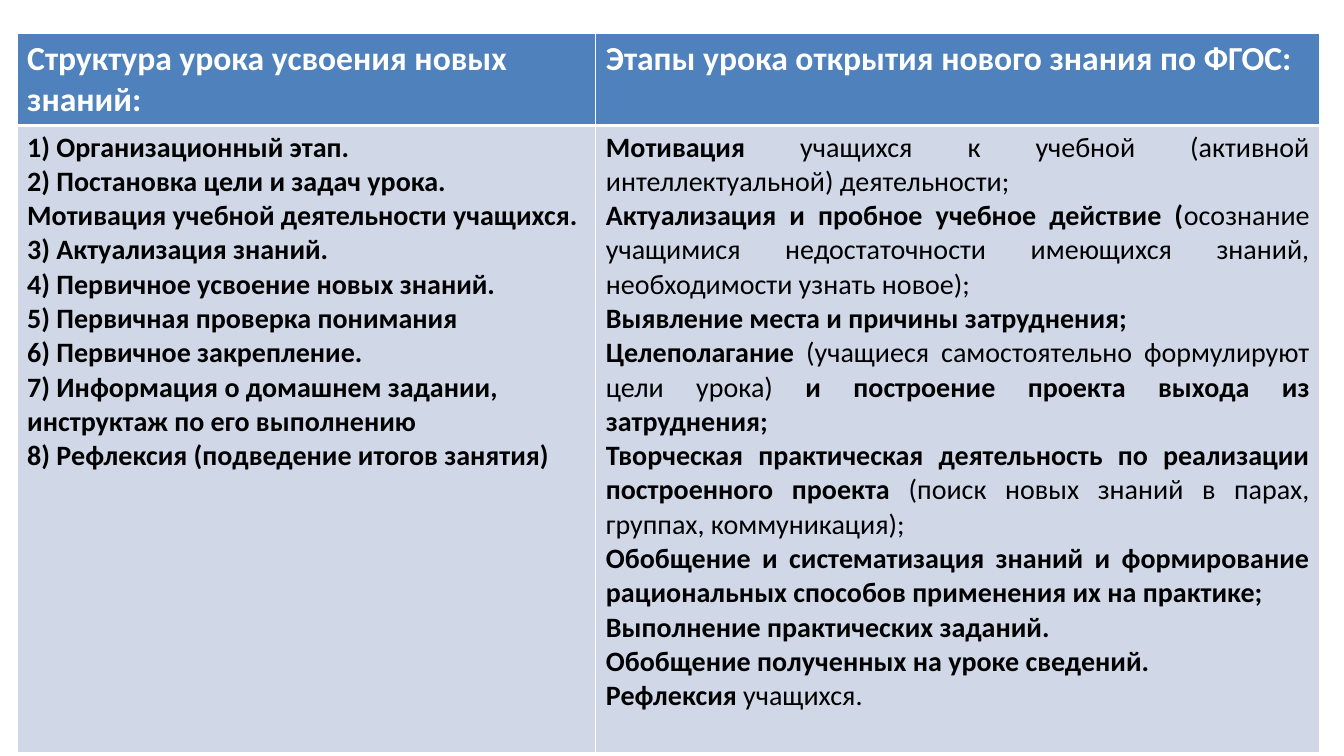
from dataclasses import dataclass

from lxml import etree
from pptx import Presentation
from pptx.dml.color import RGBColor
from pptx.enum.text import PP_ALIGN
from pptx.oxml.ns import qn
from pptx.util import Pt

LEFT = PP_ALIGN.LEFT
JUSTIFY = PP_ALIGN.JUSTIFY
PX = 9144  # EMU in one px, 100 px to the inch
BLANK = 6


@dataclass(frozen=True)
class Theme:
    font: str = "Calibri"
    head_size: int = 24
    body_size: int = 20
    white: str = "FFFFFF"
    black: str = "000000"
    blue: str = "4F81BD"
    pale: str = "D0D8E8"
    thin: int = 1
    thick: int = 3


# Each paragraph is a tuple of pieces: bold, plain, bold and so on
HEADS = [
    "Структура урока усвоения новых знаний:",
    "Этапы урока открытия нового знания по ФГОС:",
]
STEPS = [
    ("1) Организационный этап.",),
    ("2) Постановка цели и задач урока. Мотивация учебной деятельности учащихся.",),
    ("3) Актуализация знаний.",),
    ("4) Первичное усвоение новых знаний.",),
    ("5) Первичная проверка понимания",),
    ("6) Первичное закрепление.",),
    ("7) Информация о домашнем задании, инструктаж по его выполнению",),
    ("8) Рефлексия (подведение итогов занятия)",),
]
STAGES = [
    ("Мотивация",
     " учащихся к учебной (активной интеллектуальной) деятельности;"),
    ("Актуализация и пробное учебное действие (",
     "осознание учащимися недостаточности имеющихся знаний, "
     "необходимости узнать новое);"),
    ("Выявление места и причины затруднения;",),
    ("Целеполагание",
     " (учащиеся самостоятельно формулируют цели урока) ",
     "и построение проекта выхода из затруднения;"),
    ("Творческая практическая деятельность по реализации построенного проекта ",
     "(поиск новых знаний в парах, группах, коммуникация);"),
    ("Обобщение и систематизация знаний и формирование "
     "рациональных способов применения их на практике;",),
    ("Выполнение практических заданий.",),
    ("Обобщение полученных на уроке сведений.",),
    ("Рефлексия", " учащихся."),
]


class Deck:
    def __init__(self, theme, width, height):
        self.theme = theme
        self.prs = Presentation()
        self.prs.slide_width = width * PX
        self.prs.slide_height = height * PX
        self.slide = self.prs.slides.add_slide(self.prs.slide_layouts[BLANK])

    def table(self, left, top, cols, rows):
        frame = self.slide.shapes.add_table(
            len(rows), len(cols), left * PX, top * PX,
            sum(cols) * PX, sum(rows) * PX)
        table = frame.table
        for col, width in zip(table.columns, cols):
            col.width = width * PX
        for row, height in zip(table.rows, rows):
            row.height = height * PX
        return table

    def cell(self, cell, paras, size, color, fill, align=LEFT):
        frame = cell.text_frame
        for i, pieces in enumerate(paras):
            para = frame.add_paragraph() if i else frame.paragraphs[0]
            para.alignment = align
            for j, piece in enumerate(pieces):
                run = para.add_run()
                run.text = piece
                font = run.font
                font.name = self.theme.font
                font.size = Pt(size)
                font.bold = j % 2 == 0
                font.color.rgb = RGBColor.from_string(color)
        cell.fill.solid()
        cell.fill.fore_color.rgb = RGBColor.from_string(fill)

    def border(self, cell, top, bottom):
        thin = self.theme.thin
        props = cell._tc.get_or_add_tcPr()
        sides = {"a:lnL": thin, "a:lnR": thin, "a:lnT": top, "a:lnB": bottom}
        for i, (tag, width) in enumerate(sides.items()):
            line = etree.Element(qn(tag), w=str(Pt(width)))
            fill = etree.SubElement(line, qn("a:solidFill"))
            etree.SubElement(fill, qn("a:srgbClr"), val=self.theme.white)
            props.insert(i, line)

    def save(self):
        self.prs.save("out.pptx")


def main():
    theme = Theme()
    deck = Deck(theme, 1333, 750)
    table = deck.table(17, 33, cols=[574, 718], rows=[91, 622])

    # Header row
    for col, head in enumerate(HEADS):
        cell = table.cell(0, col)
        deck.cell(cell, [(head,)], theme.head_size, theme.white, theme.blue)
        deck.border(cell, theme.thin, theme.thick)

    # Lesson steps and stages
    for col, (paras, align) in enumerate([(STEPS, LEFT), (STAGES, JUSTIFY)]):
        cell = table.cell(1, col)
        deck.cell(cell, paras, theme.body_size, theme.black, theme.pale, align)
        deck.border(cell, theme.thick, theme.thin)

    deck.save()


if __name__ == "__main__":
    main()
